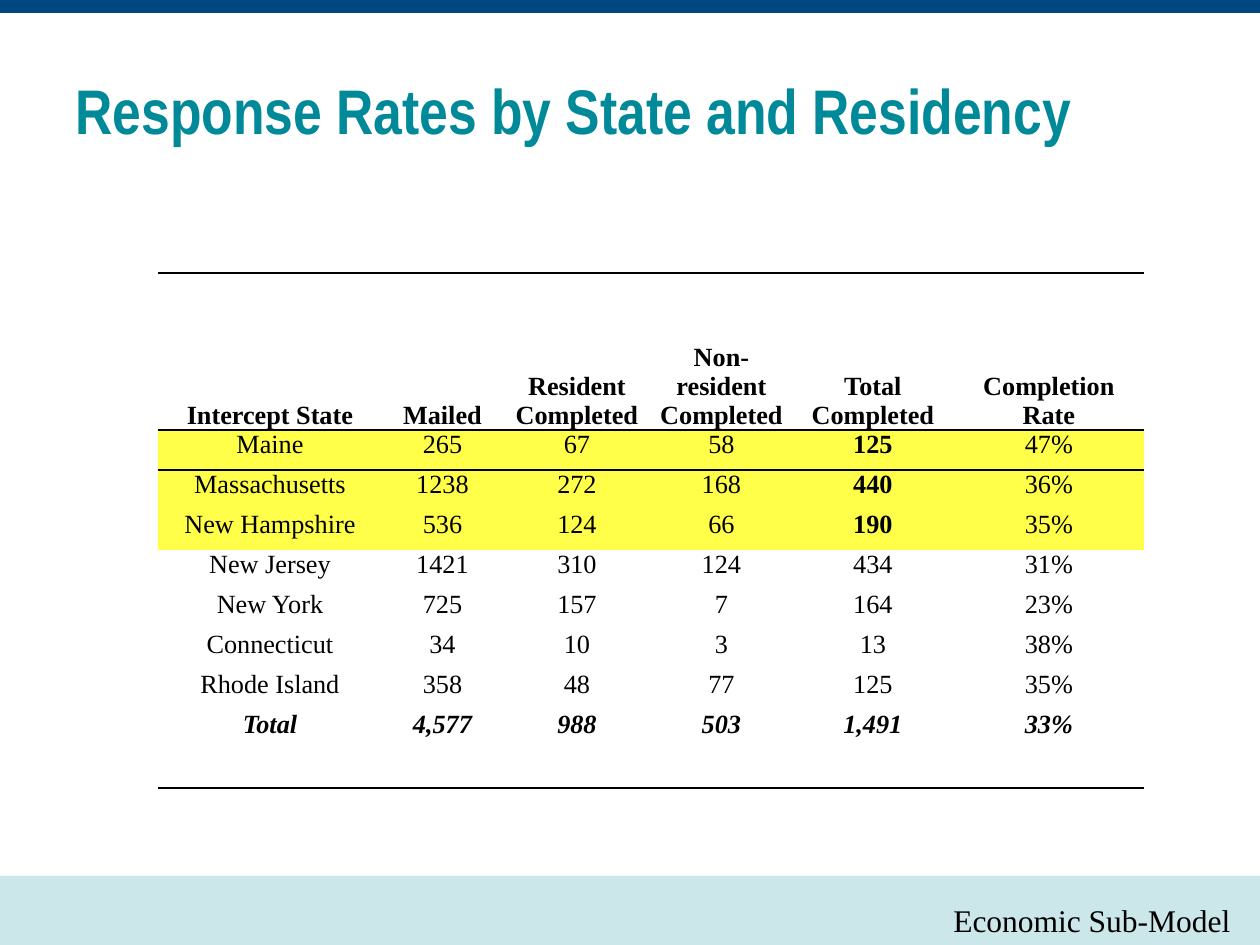
from lxml.etree import SubElement
from pptx import Presentation
from pptx.dml.color import RGBColor
from pptx.enum.shapes import MSO_SHAPE
from pptx.enum.text import MSO_ANCHOR as ANCHOR, PP_ALIGN as ALIGN
from pptx.oxml.ns import qn
from pptx.util import Emu, Pt

PX_PER_INCH = 126
SERIF = "Times New Roman"
BLACK = "000000"
NO_STYLE = "{2D5ABB26-0587-4C30-8999-92F81FD0307C}"

COL_WIDTHS = [224, 121, 148, 141, 162, 190]
ROW_HEIGHTS = [157] + [40] * 7 + [78]
ROWS = [
    ["Intercept State", "Mailed", "Resident\nCompleted",
     "Non-resident\nCompleted", "Total\nCompleted", "Completion\nRate"],
    ["Maine", "265", "67", "58", "125", "47%"],
    ["Massachusetts", "1238", "272", "168", "440", "36%"],
    ["New Hampshire", "536", "124", "66", "190", "35%"],
    ["New Jersey", "1421", "310", "124", "434", "31%"],
    ["New York", "725", "157", "7", "164", "23%"],
    ["Connecticut", "34", "10", "3", "13", "38%"],
    ["Rhode Island", "358", "48", "77", "125", "35%"],
    ["Total", "4,577", "988", "503", "1,491", "33%"],
]
HEADER, TOTAL = 0, len(ROWS) - 1
HIGHLIGHTED = range(1, 4)
TOTAL_COL = 4


def px(n):
    return Emu(round(n * 914400 / PX_PER_INCH))


def rgb(color):
    return RGBColor.from_string(color)


def style(p, size, font, color, bold=False, italic=False, align=ALIGN.CENTER):
    p.alignment = align
    f = p.font
    f.size, f.name, f.bold, f.italic = Pt(size), font, bold, italic
    f.color.rgb = rgb(color)


def add_band(s, y, h, color):
    sp = s.shapes.add_shape(MSO_SHAPE.RECTANGLE, 0, px(y), px(1260), px(h))
    sp.shadow.inherit = False
    sp.fill.solid()
    sp.fill.fore_color.rgb = rgb(color)
    sp.line.fill.background()


def add_text(s, x, y, w, h, text, anchor=ANCHOR.TOP, **font):
    tf = s.shapes.add_textbox(px(x), px(y), px(w), px(h)).text_frame
    tf.word_wrap = True
    tf.vertical_anchor = anchor
    tf.text = text
    style(tf.paragraphs[0], **font)


def add_border(cell, tag):
    """Draw a 1 pt black edge; tag is a:lnT or a:lnB."""
    ln = SubElement(cell._tc.get_or_add_tcPr(), qn(tag), w=str(Pt(1)))
    SubElement(SubElement(ln, qn("a:solidFill")), qn("a:srgbClr"), val=BLACK)


def fill_cell(cell, row):
    if row not in HIGHLIGHTED:
        cell.fill.background()
        return
    cell.fill.solid()
    cell.fill.fore_color.rgb = rgb("FFFF00")
    color = cell._tc.tcPr.find(qn("a:solidFill")).find(qn("a:srgbClr"))
    SubElement(color, qn("a:alpha"), val="71000")


def format_cell(cell, row, col, text):
    cell.margin_left = cell.margin_right = px(9)
    cell.margin_top = cell.margin_bottom = 0
    cell.vertical_anchor = ANCHOR.BOTTOM if row == HEADER else ANCHOR.TOP
    cell.text = text
    bold = row in (HEADER, TOTAL) or (row in HIGHLIGHTED and col == TOTAL_COL)
    for p in cell.text_frame.paragraphs:
        style(p, 15, SERIF, BLACK, bold=bold, italic=row == TOTAL)
    if row in (HEADER, HEADER + 1):
        add_border(cell, "a:lnT")
    if row in (HEADER, TOTAL):
        add_border(cell, "a:lnB")
    fill_cell(cell, row)


def add_rates_table(s, x, y):
    table = s.shapes.add_table(len(ROWS), len(COL_WIDTHS), px(x), px(y),
                               px(sum(COL_WIDTHS)), px(sum(ROW_HEIGHTS))).table
    table.first_row = table.horz_banding = False
    table._tbl.tblPr.find(qn("a:tableStyleId")).text = NO_STYLE
    for column, width in zip(table.columns, COL_WIDTHS):
        column.width = px(width)
    for r, (height, values) in enumerate(zip(ROW_HEIGHTS, ROWS)):
        table.rows[r].height = px(height)
        for c, text in enumerate(values):
            format_cell(table.cell(r, c), r, c, text)


def main():
    prs = Presentation()
    prs.slide_width, prs.slide_height = px(1260), px(945)
    s = prs.slides.add_slide(prs.slide_layouts[6])
    add_band(s, 876, 69, "CCE7EA")
    add_band(s, 0, 13, "00467F")
    add_text(s, 63, 63, 1134, 93, "Response Rates by State and Residency",
             anchor=ANCHOR.MIDDLE, size=36, font="Arial Narrow",
             color="008998", bold=True, align=ALIGN.LEFT)
    add_rates_table(s, 158, 273)
    add_text(s, 924, 895, 336, 50, "Economic Sub-Model",
             size=18, font=SERIF, color=BLACK)
    prs.save("out.pptx")


if __name__ == "__main__":
    main()
